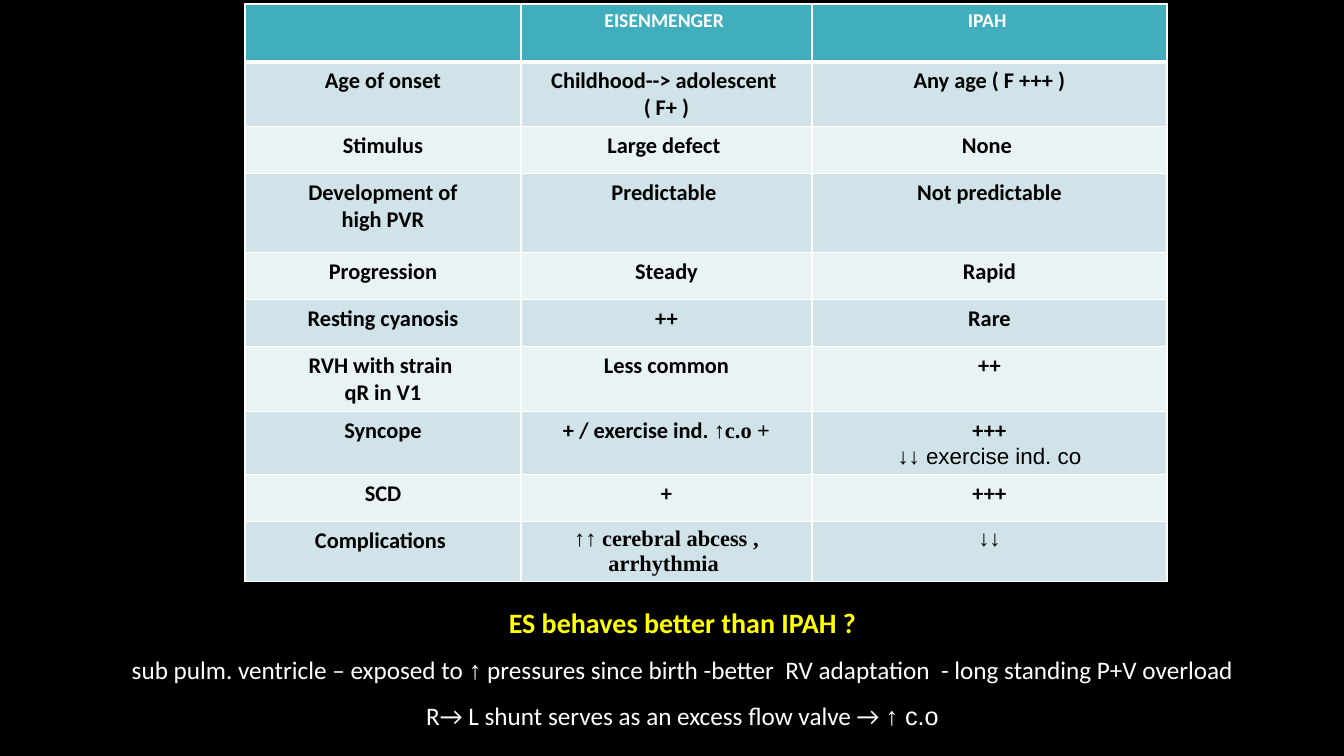
from dataclasses import dataclass

from lxml.etree import SubElement
from pptx import Presentation
from pptx.dml.color import RGBColor
from pptx.enum.text import MSO_AUTO_SIZE, PP_ALIGN
from pptx.oxml.ns import qn
from pptx.slide import Slide
from pptx.table import _Cell
from pptx.text.text import TextFrame
from pptx.util import Emu, Pt

PIXELS_PER_INCH = 100.8


@dataclass(frozen=True)
class Theme:
    background: str = "000000"
    header: str = "41AEBD"
    bands: tuple[str, str] = ("CFE3E8", "E9F2F4")
    border: str = "FFFFFF"
    cell_text: str = "000000"
    light_text: str = "FFFFFF"
    highlight: str = "FFFF00"
    header_size: int = 14
    cell_size: int = 16
    question_size: int = 20
    note_size: int = 18
    thin_border: int = 1
    thick_border: int = 3
    body: str = "Calibri"
    serif: str = "Times New Roman"
    sans: str = "Arial"


THEME = Theme()


@dataclass(frozen=True)
class Piece:
    text: str
    font: str = THEME.body
    bold: bool = True


@dataclass(frozen=True)
class Line:
    pieces: tuple[Piece, ...]
    size: int = THEME.cell_size
    color: str = THEME.cell_text


@dataclass(frozen=True)
class TableRow:
    height: int
    cells: tuple[str | tuple[Line, ...], ...]


COLUMN_WIDTHS = (276, 291, 355)
ROWS = (
    TableRow(58, ("", "EISENMENGER ", "IPAH ")),
    TableRow(64, ("Age of onset", "Childhood--> adolescent \n( F+ )", "Any age ( F +++ )")),
    TableRow(47, ("Stimulus", "Large defect ", "None ")),
    TableRow(79, ("Development of\nhigh PVR", "Predictable ", "Not predictable")),
    TableRow(47, ("Progression", "Steady", "Rapid")),
    TableRow(47, ("Resting cyanosis", "++", "Rare")),
    TableRow(64, ("RVH with strain \nqR in V1", "Less common", "++")),
    TableRow(63, (
        "Syncope",
        (Line((Piece("+ / exercise ind. "), Piece("↑c.o +", THEME.serif))),),
        (Line((Piece("+++"),)), Line((Piece("↓↓ exercise ind. co", THEME.sans, False),))),
    )),
    TableRow(47, ("SCD", "+", "+++")),
    TableRow(47, (
        "Complications ",
        (Line((Piece("↑↑ cerebral abcess , arrhythmia ", THEME.serif),)),),
        (Line((Piece("↓↓", THEME.sans),)),),
    )),
)
CONCLUSION = (
    Line((Piece("ES behaves better than IPAH ?"),), THEME.question_size, THEME.highlight),
    Line((
        Piece("sub pulm. ventricle – exposed to ", bold=False),
        Piece("↑", THEME.sans, False),
        Piece(" pressures since birth -better  RV adaptation  - long standing P+V overload",
              bold=False),
    ), THEME.note_size, THEME.light_text),
    Line((
        Piece("R→ L shunt serves as an excess flow valve → ", bold=False),
        Piece("↑ c.o", THEME.sans, False),
    ), THEME.note_size, THEME.light_text),
)


def px(value: int) -> Emu:
    return Emu(round(value * 914400 / PIXELS_PER_INCH))


def write_lines(text_frame: TextFrame, lines: tuple[Line, ...],
                spacing: float | None = None) -> None:
    for index, line in enumerate(lines):
        paragraph = text_frame.add_paragraph() if index else text_frame.paragraphs[0]
        paragraph.alignment = PP_ALIGN.CENTER
        paragraph.line_spacing = spacing
        for piece in line.pieces:
            run = paragraph.add_run()
            run.text = piece.text
            run.font.name = piece.font
            run.font.bold = piece.bold
            run.font.size = Pt(line.size)
            run.font.color.rgb = RGBColor.from_string(line.color)


def add_borders(cell: _Cell, top: int, bottom: int) -> None:
    """Put solid border lines ahead of the cell's fill, as the schema orders them."""
    properties = cell._tc.get_or_add_tcPr()
    widths = {"a:lnL": THEME.thin_border, "a:lnR": THEME.thin_border,
              "a:lnT": top, "a:lnB": bottom}
    for position, (tag, width) in enumerate(widths.items()):
        border = SubElement(properties, qn(tag), w=str(Pt(width)))
        fill = SubElement(border, qn("a:solidFill"))
        SubElement(fill, qn("a:srgbClr"), val=THEME.border)
        properties.insert(position, border)


def add_comparison_table(slide: Slide) -> None:
    frame = slide.shapes.add_table(
        len(ROWS), len(COLUMN_WIDTHS), px(245), px(4),
        px(sum(COLUMN_WIDTHS)), px(sum(row.height for row in ROWS)))
    table = frame.table
    for column, width in zip(table.columns, COLUMN_WIDTHS):
        column.width = px(width)
    for row_index, row in enumerate(ROWS):
        table.rows[row_index].height = px(row.height)
        is_header = row_index == 0
        fill_color = THEME.header if is_header else THEME.bands[(row_index - 1) % 2]
        size = THEME.header_size if is_header else THEME.cell_size
        color = THEME.light_text if is_header else THEME.cell_text
        top = THEME.thick_border if row_index == 1 else THEME.thin_border
        bottom = THEME.thick_border if is_header else THEME.thin_border
        for column_index, content in enumerate(row.cells):
            cell = table.cell(row_index, column_index)
            cell.fill.solid()
            cell.fill.fore_color.rgb = RGBColor.from_string(fill_color)
            add_borders(cell, top, bottom)
            if isinstance(content, str):
                content = tuple(Line((Piece(text),), size, color)
                                for text in content.splitlines())
            write_lines(cell.text_frame, content)


def add_conclusion(slide: Slide) -> None:
    box = slide.shapes.add_textbox(px(0), px(584), px(1365), px(148))
    box.text_frame.word_wrap = True
    box.text_frame.auto_size = MSO_AUTO_SIZE.SHAPE_TO_FIT_TEXT
    write_lines(box.text_frame, CONCLUSION, spacing=1.5)


def main() -> None:
    presentation = Presentation()
    presentation.slide_width = px(1344)
    presentation.slide_height = px(756)
    slide = presentation.slides.add_slide(presentation.slide_layouts[6])
    slide.background.fill.solid()
    slide.background.fill.fore_color.rgb = RGBColor.from_string(THEME.background)
    add_comparison_table(slide)
    add_conclusion(slide)
    presentation.save("out.pptx")


if __name__ == "__main__":
    main()
